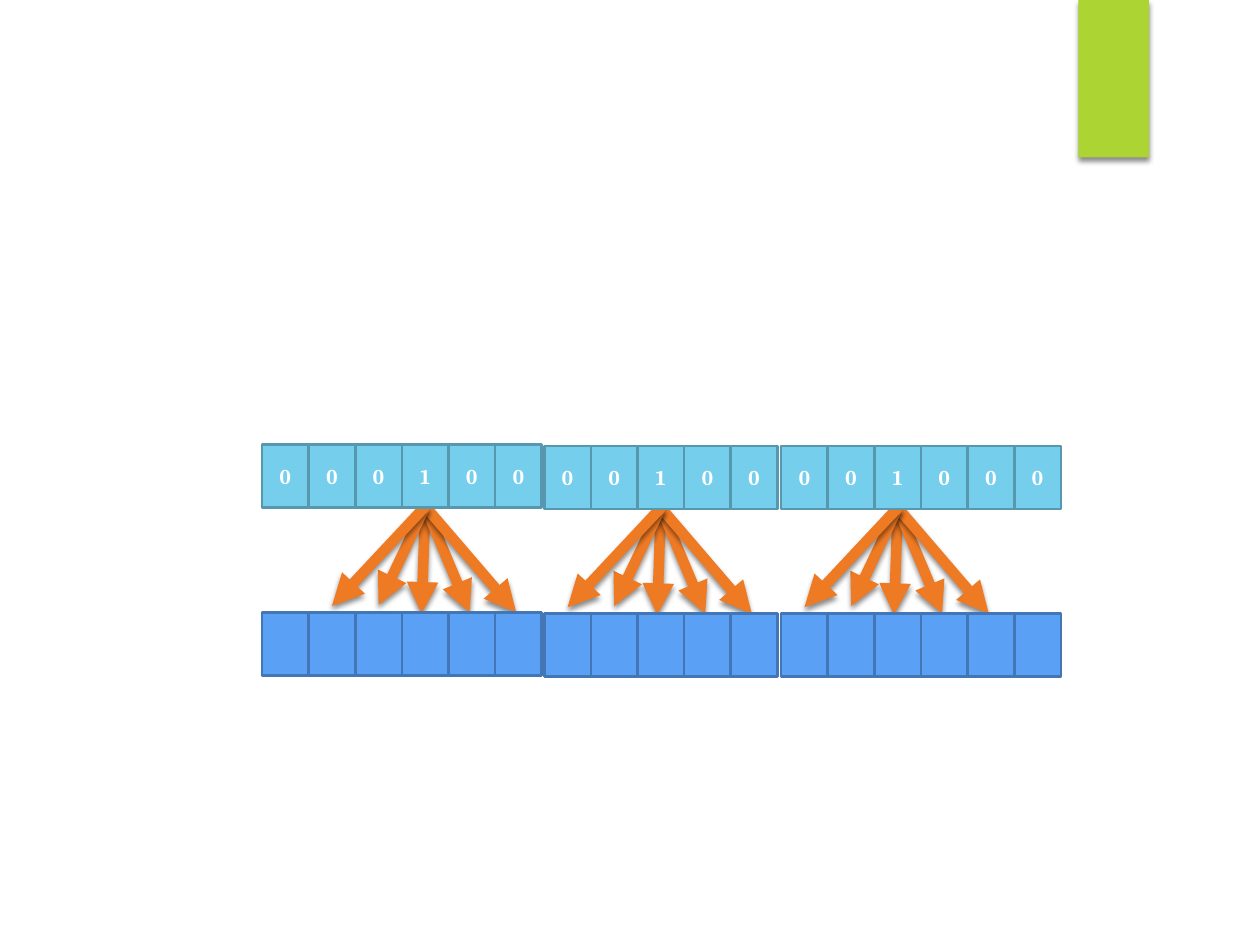
from lxml.etree import SubElement
from pptx import Presentation
from pptx.dml.color import RGBColor
from pptx.enum.shapes import MSO_CONNECTOR as CONN, MSO_SHAPE as SHAPE
from pptx.enum.text import MSO_ANCHOR as ANCHOR, PP_ALIGN as ALIGN
from pptx.oxml.ns import qn
from pptx.util import Inches, Pt

COLORS = {
    "tab": "ACD433", "arrow": "EF7A24", "shadow": "000000", "digit": "FFFFFF",
    "bit": "75CEEC", "bit_edge": "5798AF",
    "cell": "5AA0F5", "cell_edge": "4376B5",
}
COL, ROW = 0.37, 0.5
ROW_GAP = 2.66 * ROW
FAN = [(-0.08, 1.7), (0.95, 1.68), (1.95, 1.68), (-1, 1.56), (-2, 1.58)]
BLOCKS = [(6.2, 3.54, "001000"), (4.32, 3.54, "00100"), (2.08, 3.53, "000100")]


def rgb(name):
    return RGBColor.from_string(COLORS[name])


def add_shadow(sp):
    effects = SubElement(sp._element.spPr, qn("a:effectLst"))
    shadow = SubElement(effects, qn("a:outerShdw"), blurRad=str(Pt(3)),
                        dist=str(Pt(2)), dir="5400000", rotWithShape="0")
    color = SubElement(shadow, qn("a:srgbClr"), val=COLORS["shadow"])
    SubElement(color, qn("a:alpha"), val="45000")


def add_box(s, x, y, w, h, fill):
    sp = s.shapes.add_shape(SHAPE.RECTANGLE, Inches(x), Inches(y), Inches(w), Inches(h))
    sp.fill.solid()
    sp.fill.fore_color.rgb = rgb(fill)
    return sp


def add_corner_tab(s, x, y, w, h):
    sp = add_box(s, x, y, w, h, "tab")
    sp.line.fill.background()
    add_shadow(sp)


def add_fan(s, x, y):
    for cols, rows in FAN:
        c = s.shapes.add_connector(CONN.STRAIGHT, Inches(x), Inches(y),
                                   Inches(x + cols * COL), Inches(y + rows * ROW))
        c.line.color.rgb = rgb("arrow")
        c.line.width = Pt(6)
        SubElement(c._element.spPr.find(qn("a:ln")), qn("a:tailEnd"), type="triangle")
        add_shadow(c)


def add_row(s, x, y, digits, fill):
    for i, digit in enumerate(digits):
        sp = add_box(s, x + i * COL, y, COL, ROW, fill)
        sp.shadow.inherit = False
        sp.line.color.rgb = rgb(fill + "_edge")
        sp.line.width = Pt(1.5)
        if digit.strip():
            add_digit(sp, digit)


def add_digit(sp, digit):
    tf = sp.text_frame
    tf.margin_left = tf.margin_right = 0
    tf.vertical_anchor = ANCHOR.MIDDLE
    tf.text = digit
    p = tf.paragraphs[0]
    p.alignment = ALIGN.CENTER
    font = p.runs[0].font
    font.name, font.size, font.bold = "Cambria", Pt(12), True
    font.color.rgb = rgb("digit")


def add_block(s, x, y, bits):
    add_fan(s, x + (bits.index("1") + 0.5) * COL, y + ROW - 0.01)
    add_row(s, x, y, bits, "bit")
    add_row(s, x, y + ROW_GAP, " " * len(bits), "cell")


def main():
    prs = Presentation()
    prs.slide_width, prs.slide_height = Inches(10), Inches(7.5)
    s = prs.slides.add_slide(prs.slide_layouts[6])
    add_corner_tab(s, 8.56, 0, 0.56, 1.25)
    for x, y, bits in BLOCKS:
        add_block(s, x, y, bits)
    prs.save("out.pptx")


if __name__ == "__main__":
    main()
